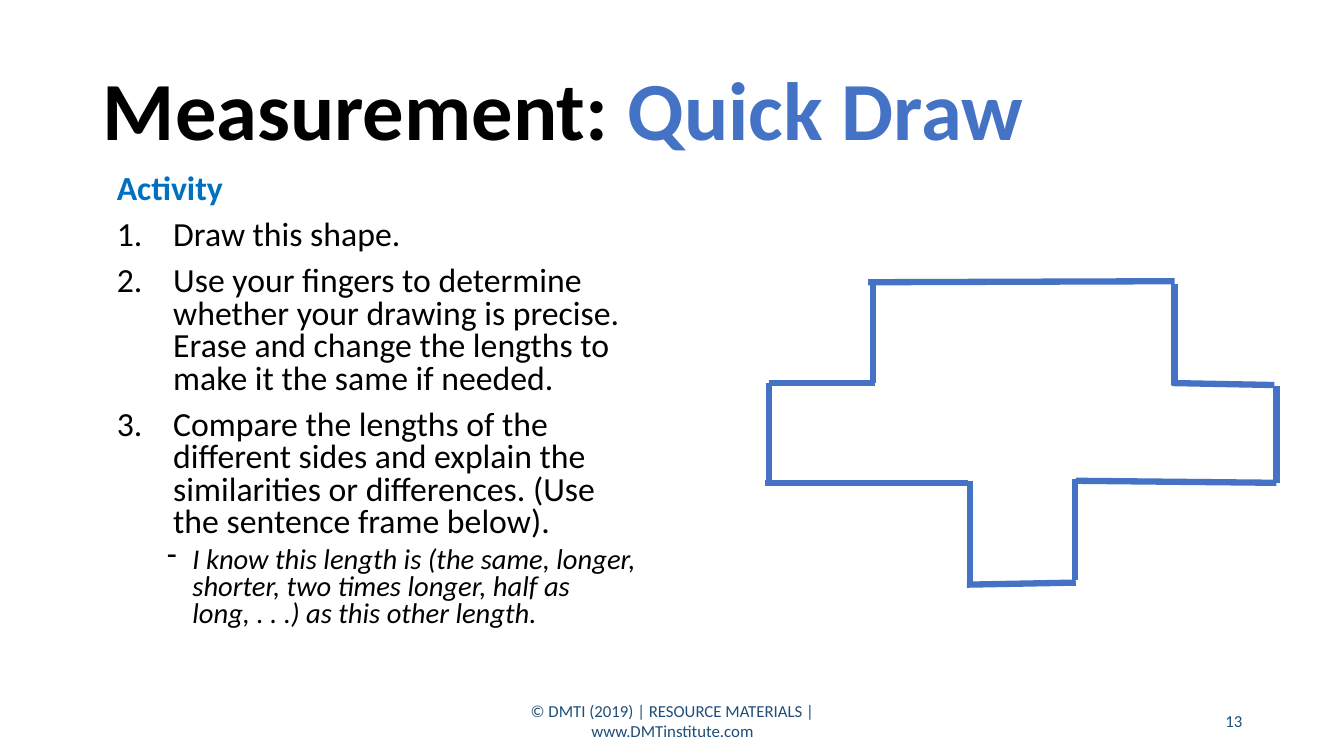
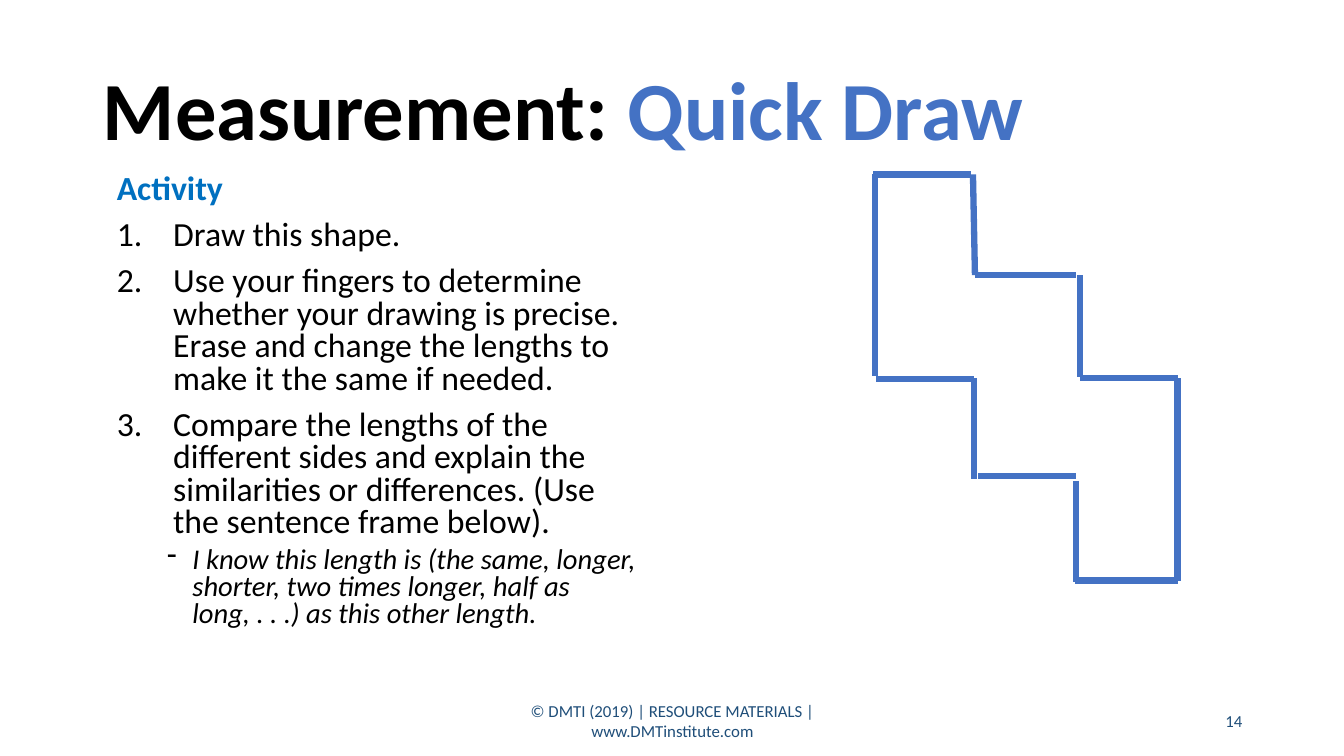
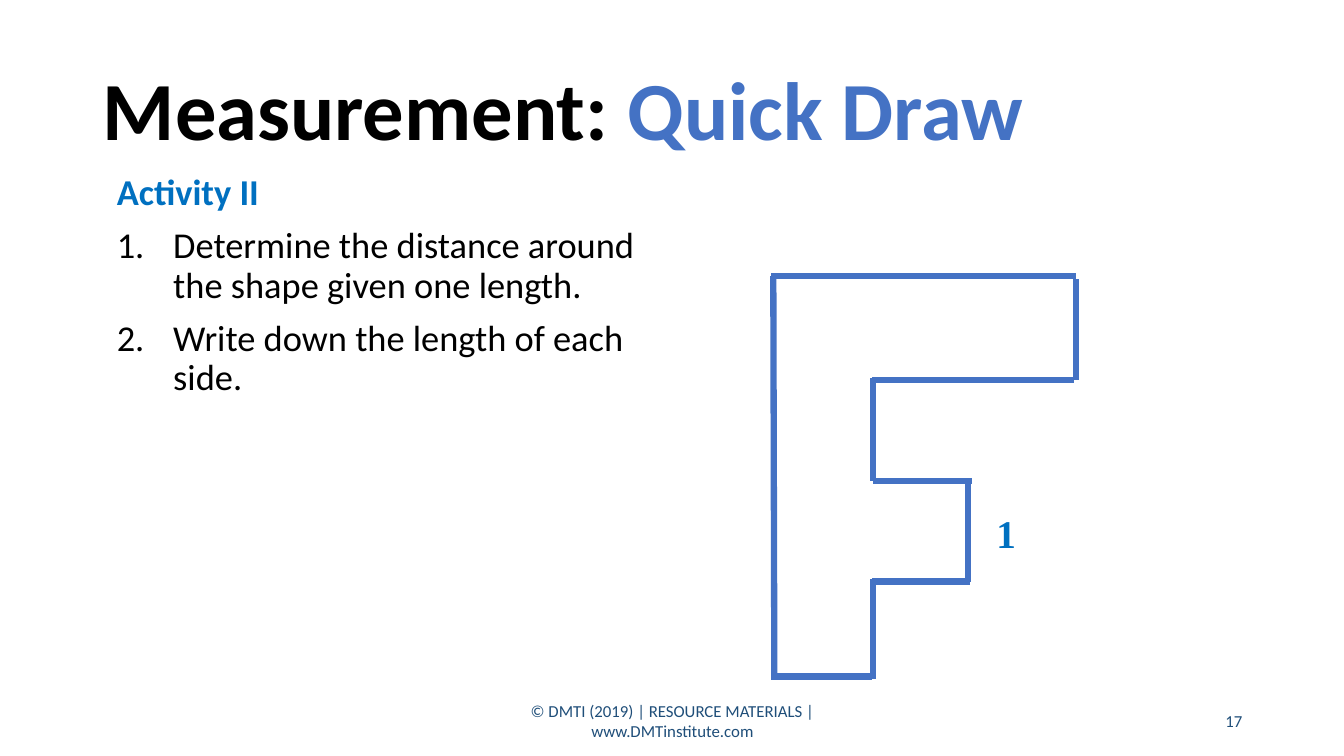
"""Build three slides of a measurement drawing activity."""
from lxml import etree
from pptx import Presentation
from pptx.dml.color import RGBColor
from pptx.enum import shapes, text
from pptx.oxml.ns import qn
from pptx.util import Inches, Pt

BLACK, BLUE, ACCENT, NAVY = "000000", "4472C4", "0070C0", "1F4E79"
FONT = "Calibri"
LEFT, CENTER, RIGHT = text.PP_ALIGN.LEFT, text.PP_ALIGN.CENTER, text.PP_ALIGN.RIGHT
TOP, MIDDLE = text.MSO_ANCHOR.TOP, text.MSO_ANCHOR.MIDDLE

TITLE = [("Measurement: ", BLACK), ("Quick Draw", BLUE)]
FOOTER = "© DMTI (2019) | RESOURCE MATERIALS | www.DMTinstitute.com"
TITLE_BOX = (0.92, 0.4, 11.5, 1.45)
FOOTER_BOX = (4.42, 6.95, 4.5, 0.4)
NUMBER_BOX = (9.42, 6.95, 3, 0.4)
BODY_BOX = (1.06, 1.68, 5.41, 4.77)

DRAW = {
    "heading": "Activity",
    "steps": [
        "Draw this shape.",
        "Use your fingers to determine whether your drawing is precise. "
        "Erase and change the lengths to make it the same if needed.",
        "Compare the lengths of the different sides and explain the similarities "
        "or differences. (Use the sentence frame below).",
    ],
    "frame": "I know this length is (the same, longer, shorter, two times longer, "
             "half as long, . . .) as this other length.",
    "size": 24.1,
    "spacing": 0.8,
}
MEASURE = {
    "heading": "Activity II",
    "steps": [
        "Determine the distance around the shape given one length.",
        "Write down the length of each side.",
    ],
    "frame": None,
    "size": 26,
    "spacing": 0.9,
}
SLIDES = [
    {"number": "13", "activity": DRAW, "labels": [], "sides": [
        (8.61, 2.8, 11.65, 2.79), (11.65, 2.82, 11.65, 3.82),
        (11.62, 3.8, 12.64, 3.82), (12.66, 3.83, 12.66, 4.79),
        (10.67, 4.77, 12.66, 4.79), (10.66, 4.75, 10.66, 5.75),
        (9.59, 5.8, 10.67, 5.78), (9.62, 4.77, 9.62, 5.77),
        (7.59, 4.79, 9.6, 4.79), (7.63, 3.8, 7.63, 4.76),
        (7.63, 3.8, 8.68, 3.8), (8.66, 2.8, 8.66, 3.8)]},
    {"number": "14", "activity": DRAW, "labels": [], "sides": [
        (8.66, 1.73, 9.63, 1.73), (9.65, 1.73, 9.67, 2.73),
        (9.67, 2.73, 10.67, 2.73), (10.71, 2.73, 10.71, 3.74),
        (10.71, 3.75, 11.68, 3.75), (11.68, 3.75, 11.68, 5.76),
        (10.66, 5.76, 11.68, 5.76), (10.67, 4.77, 10.67, 5.77),
        (9.7, 4.72, 10.67, 4.72), (9.66, 3.75, 9.66, 4.75),
        (8.69, 3.76, 9.66, 3.76), (8.68, 1.73, 8.68, 3.73)]},
    {"number": "17", "activity": MEASURE, "labels": [("1", (9.64, 5, 0.68, 0.57))], "sides": [
        (7.65, 2.74, 10.67, 2.74), (10.67, 2.77, 10.67, 3.77),
        (8.65, 3.77, 10.65, 3.77), (8.66, 3.75, 8.66, 4.77),
        (8.66, 4.77, 9.64, 4.77), (9.6, 4.77, 9.6, 5.77),
        (8.65, 5.77, 9.62, 5.77), (8.66, 5.74, 8.66, 6.74),
        (7.65, 6.71, 8.65, 6.71), (7.67, 2.74, 7.68, 6.71)]},
]


def color(value):
    return RGBColor.from_string(value)


def inches(values):
    return [Inches(value) for value in values]


def set_all(target, values):
    for name, value in values.items():
        setattr(target, name, value)


def add_run(paragraph, words, size, shade, **style):
    run = paragraph.add_run()
    run.text = words
    set_all(run.font, {"name": FONT, "size": Pt(size), **style})
    run.font.color.rgb = color(shade)


def prepare_frame(shape, anchor):
    set_all(shape.text_frame, {"word_wrap": True, "vertical_anchor": anchor,
                               "auto_size": text.MSO_AUTO_SIZE.NONE})
    return shape.text_frame


def add_box(slide, box, anchor=TOP):
    return prepare_frame(slide.shapes.add_textbox(*inches(box)), anchor)


def add_line_of_text(slide, box, words, size, shade, alignment, anchor=MIDDLE, **style):
    paragraph = add_box(slide, box, anchor).paragraphs[0]
    paragraph.alignment = alignment
    add_run(paragraph, words, size, shade, **style)


def add_bullet(paragraph, tag, attributes, margin, hanging):
    properties = paragraph._p.get_or_add_pPr()
    properties.set("marL", str(Inches(margin)))
    properties.set("indent", str(-Inches(hanging)))
    etree.SubElement(properties, qn(tag), attributes)


def add_title(slide):
    title = slide.shapes.title
    set_all(title, dict(zip(("left", "top", "width", "height"), inches(TITLE_BOX))))
    paragraph = prepare_frame(title, MIDDLE).paragraphs[0]
    set_all(paragraph, {"alignment": LEFT, "line_spacing": 0.9})
    for words, shade in TITLE:
        add_run(paragraph, words, 59, shade, bold=True)


def add_activity(slide, activity):
    frame = add_box(slide, BODY_BOX)
    size, spacing = activity["size"], activity["spacing"]
    heading = frame.paragraphs[0]
    heading.line_spacing = spacing
    add_run(heading, activity["heading"], size, ACCENT, bold=True)
    for step in activity["steps"]:
        paragraph = frame.add_paragraph()
        add_bullet(paragraph, "a:buAutoNum", {"type": "arabicPeriod"}, 0.56, 0.56)
        set_all(paragraph, {"line_spacing": spacing, "space_before": Pt(10)})
        add_run(paragraph, step, size, BLACK)
    if activity["frame"]:
        paragraph = frame.add_paragraph()
        add_bullet(paragraph, "a:buChar", {"char": "-"}, 0.75, 0.25)
        set_all(paragraph, {"level": 1, "line_spacing": spacing, "space_before": Pt(5)})
        add_run(paragraph, activity["frame"], 20.4, BLACK, italic=True)


def add_side(slide, ends):
    side = slide.shapes.add_connector(shapes.MSO_CONNECTOR.STRAIGHT, *inches(ends))
    side.line.color.rgb = color(BLUE)
    side.line.width = Pt(4.5)
    etree.SubElement(side._element.spPr, qn("a:effectLst"))


def main():
    presentation = Presentation()
    set_all(presentation, {"slide_width": Inches(13.33), "slide_height": Inches(7.5)})
    for content in SLIDES:
        slide = presentation.slides.add_slide(presentation.slide_layouts[5])
        add_title(slide)
        add_line_of_text(slide, FOOTER_BOX, FOOTER, 12, NAVY, CENTER)
        add_line_of_text(slide, NUMBER_BOX, content["number"], 12, NAVY, RIGHT)
        add_activity(slide, content["activity"])
        for words, box in content["labels"]:
            add_line_of_text(slide, box, words, 28, ACCENT, CENTER, TOP,
                             name="Times New Roman", bold=True)
        for ends in content["sides"]:
            add_side(slide, ends)
    presentation.save("out.pptx")


if __name__ == "__main__":
    main()
